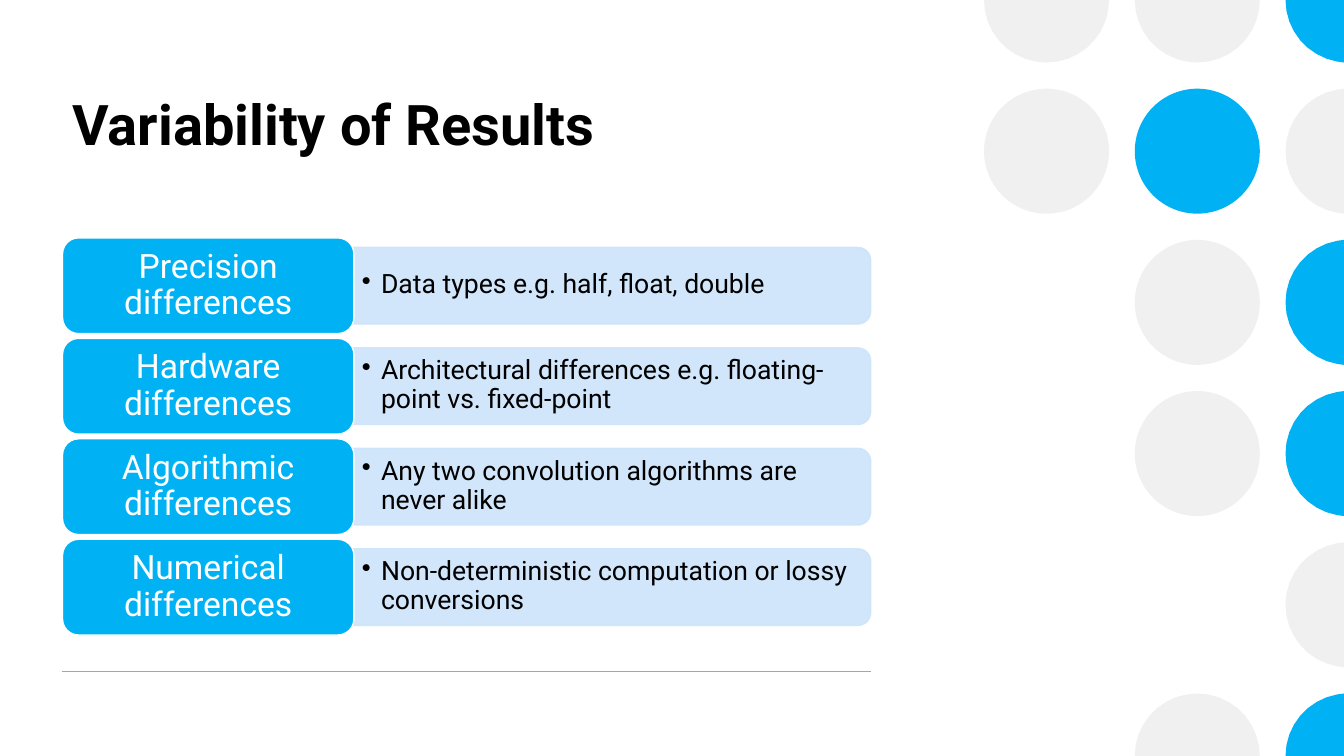
import math

import lxml.etree
import pptx
import pptx.dml.color
import pptx.enum.shapes
import pptx.enum.text
import pptx.oxml.ns
import pptx.util

Inches = pptx.util.Inches
RGBColor = pptx.dml.color.RGBColor
SHAPES = pptx.enum.shapes.MSO_SHAPE
ALIGN = pptx.enum.text.PP_ALIGN
ANCHOR = pptx.enum.text.MSO_ANCHOR
qn = pptx.oxml.ns.qn

BLUE = RGBColor(0x00, 0xB2, 0xF3)
PALE_BLUE = RGBColor(0xCC, 0xE4, 0xFA)
PALE_GREY = RGBColor(0xEF, 0xF0, 0xEF)
RULE_GREY = RGBColor(0xA6, 0xA6, 0xA6)
BLACK = RGBColor(0x00, 0x00, 0x00)
WHITE = RGBColor(0xFF, 0xFF, 0xFF)


def write(shape, text, size, color, bold=False, align=ALIGN.LEFT, anchor=ANCHOR.MIDDLE,
          spacing=0.9, inset=(0.08, 0.04), bullet_indent=None):
    frame = shape.text_frame
    frame.word_wrap = True
    frame.vertical_anchor = anchor
    frame.margin_left = frame.margin_right = Inches(inset[0])
    frame.margin_top = frame.margin_bottom = Inches(inset[1])
    para = frame.paragraphs[0]
    para.alignment = align
    para.line_spacing = spacing
    if bullet_indent:
        props = para._p.get_or_add_pPr()
        props.set("marL", str(Inches(bullet_indent)))
        props.set("indent", str(-Inches(bullet_indent)))
        lxml.etree.SubElement(props, qn("a:buChar")).set("char", "•")
    span = para.add_run()
    span.text = text
    span.font.name = "Roboto"
    span.font.size = pptx.util.Pt(size)
    span.font.bold = bold
    span.font.color.rgb = color


def paint(shape, fill, line=None):
    shape.shadow.inherit = False
    shape.fill.solid()
    shape.fill.fore_color.rgb = fill
    if line is None:
        shape.line.fill.background()
    else:
        shape.line.color.rgb = line
        shape.line.width = pptx.util.Pt(1)


deck = pptx.Presentation()
deck.slide_width = Inches(13.33)
deck.slide_height = Inches(7.5)
page = deck.slides.add_slide(deck.slide_layouts[6])

# Dot pattern: the top and bottom rows and the right column are cut at the slide edge
RADIUS = 0.62
DOT_ROWS = ["GGB", "GBG", " GB", " GB", "  G", " GB"]
DOT_COLORS = {"G": PALE_GREY, "B": BLUE}
VISIBLE_ARCS = {0: (0, 180), 5: (180, 360)}
for row, codes in enumerate(DOT_ROWS):
    for column, code in enumerate(codes):
        if code == " ":
            continue
        x, y = 10.38 + 1.495 * column, 1.5 * row
        first, last = VISIBLE_ARCS.get(row, (0, 360))
        if column == 2:
            first, last = max(first, 90), min(last, 270)
        if last - first == 360:
            dot = page.shapes.add_shape(SHAPES.OVAL, Inches(x - RADIUS), Inches(y - RADIUS),
                                        Inches(2 * RADIUS), Inches(2 * RADIUS))
        else:
            points = []
            for degree in range(first, last + 1, 10):
                angle = math.radians(degree)
                points.append((min(Inches(x + RADIUS * math.cos(angle)), deck.slide_width),
                               Inches(y + RADIUS * math.sin(angle))))
            if column == 2:
                points.append((deck.slide_width, Inches(y)))
            outline = page.shapes.build_freeform(*points[0])
            outline.add_line_segments(points[1:], close=True)
            dot = outline.convert_to_shape()
        paint(dot, DOT_COLORS[code])

# Rule below the list
rule = page.shapes.add_connector(pptx.enum.shapes.MSO_CONNECTOR.STRAIGHT,
                                 Inches(0.62), Inches(6.66), Inches(8.64), Inches(6.66))
rule.line.color.rgb = RULE_GREY
rule.line.width = pptx.util.Pt(1)
lxml.etree.SubElement(rule._element.spPr, qn("a:effectLst"))

# Title
title = page.shapes.add_textbox(Inches(0.62), Inches(0.84), Inches(8.02), Inches(1.39))
write(title, "Variability of Results", 40, BLACK, bold=True, anchor=ANCHOR.TOP,
      spacing=1.0, inset=(0.1, 0.05))

# List of differences: a label with a detail panel beside it
DIFFERENCES = [
    ("Precision differences", "Data types e.g. half, float, double"),
    ("Hardware differences", "Architectural differences e.g. floating-point vs. fixed-point"),
    ("Algorithmic differences", "Any two convolution algorithms are never alike"),
    ("Numerical differences", "Non-deterministic computation or lossy conversions"),
]
ROW_PITCH = 2.99 / 3
for row, (label_text, detail_text) in enumerate(DIFFERENCES):
    top = 2.36 + row * ROW_PITCH

    # The panel is turned so that its two round corners face right
    panel = page.shapes.add_shape(SHAPES.ROUND_2_SAME_RECTANGLE, Inches(5.69),
                                  Inches(top - 2.09), Inches(0.76), Inches(5.13))
    panel.rotation = 90
    paint(panel, PALE_BLUE, PALE_BLUE)
    for color in panel._element.spPr.iter(qn("a:srgbClr")):
        lxml.etree.SubElement(color, qn("a:alpha")).set("val", "90000")

    detail = page.shapes.add_textbox(Inches(3.51), Inches(top + 0.13), Inches(5.1), Inches(0.68))
    write(detail, detail_text, 19, BLACK, bullet_indent=0.19)

    label = page.shapes.add_shape(SHAPES.ROUNDED_RECTANGLE, Inches(0.62), Inches(top),
                                  Inches(2.89), Inches(0.95))
    paint(label, BLUE, WHITE)
    write(label, label_text, 24, WHITE, align=ALIGN.CENTER)

deck.save("out.pptx")
